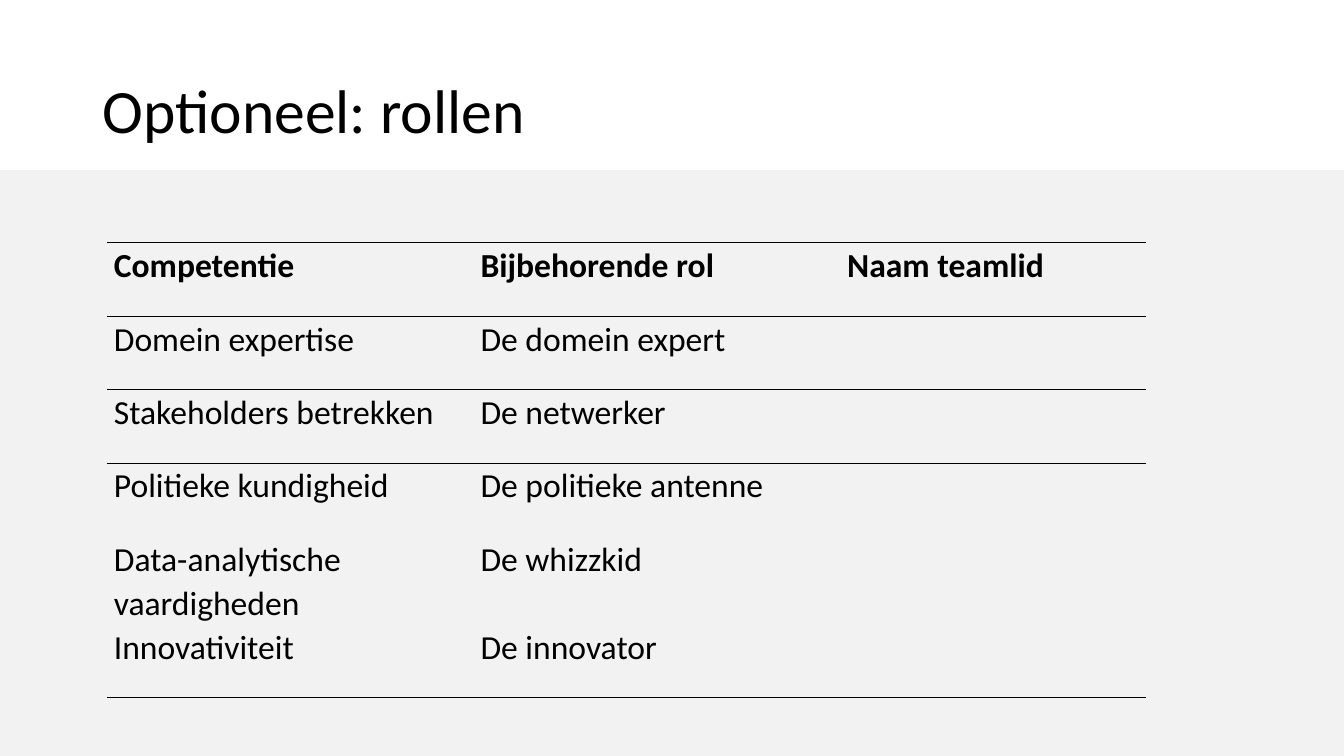
from typing import NamedTuple

from lxml import etree
from pptx import Presentation
from pptx.dml.color import RGBColor
from pptx.enum.shapes import MSO_SHAPE
from pptx.enum.text import MSO_ANCHOR, PP_ALIGN
from pptx.oxml.ns import qn
from pptx.util import Cm, Pt

RECTANGLE = MSO_SHAPE.RECTANGLE
MIDDLE = MSO_ANCHOR.MIDDLE
LEFT, JUSTIFY = PP_ALIGN.LEFT, PP_ALIGN.JUSTIFY

FONT = "Calibri"
BLACK, LIGHT_GREY = "000000", "F2F2F2"
PLAIN_TABLE_STYLE = "{2D5ABB26-0587-4C30-8999-92F81FD0307C}"

SLIDE_WIDTH, SLIDE_HEIGHT = Cm(33.87), Cm(19.05)
BAND_TOP = Cm(4.29)
COLUMN_WIDTHS = (Cm(9.24), Cm(9.24), Cm(7.72))
ROW_HEIGHT = Cm(1.85)


class Role(NamedTuple):
    competence: str
    role: str
    member: str = ""


ROLES = [
    Role("Competentie", "Bijbehorende rol", "Naam teamlid"),
    Role("Domein expertise", "De domein expert"),
    Role("Stakeholders betrekken", "De netwerker"),
    Role("Politieke kundigheid", "De politieke antenne"),
    Role("Data-analytische vaardigheden", "De whizzkid"),
    Role("Innovativiteit", "De innovator"),
]
RULED_BELOW = {0, 1, len(ROLES) - 1}


def rgb(value: str) -> RGBColor:
    return RGBColor.from_string(value)


def write(frame, text: str, *, size: float, bold: bool = False,
          align=LEFT, spacing: float = 1.0, color: str = BLACK) -> None:
    paragraph = frame.paragraphs[0]
    paragraph.alignment = align
    paragraph.line_spacing = spacing
    run = paragraph.add_run()
    run.text = text
    run.font.name = FONT
    run.font.size = Pt(size)
    run.font.bold = bold
    run.font.color.rgb = rgb(color)


def add_border(cell, side: str, color: str = BLACK, width: float = 1) -> None:
    """Rule one side of a cell: "T" for top, "B" for bottom."""
    properties = cell._tc.get_or_add_tcPr()
    line = etree.SubElement(properties, qn(f"a:ln{side}"), w=str(Pt(width)))
    fill = etree.SubElement(line, qn("a:solidFill"))
    etree.SubElement(fill, qn("a:srgbClr"), val=color)


def add_band(slide) -> None:
    band = slide.shapes.add_shape(RECTANGLE, 0, BAND_TOP, SLIDE_WIDTH, SLIDE_HEIGHT - BAND_TOP)
    band.shadow.inherit = False
    band.fill.solid()
    band.fill.fore_color.rgb = rgb(LIGHT_GREY)
    band.line.fill.background()
    slide.shapes._spTree.insert(2, band._element)  # behind the title


def add_title(slide, text: str) -> None:
    title = slide.shapes.title
    title.left, title.top, title.width, title.height = Cm(2.33), Cm(1.01), Cm(29.21), Cm(3.68)
    title.text_frame.vertical_anchor = MIDDLE
    title.text_frame.word_wrap = True
    write(title.text_frame, text, size=44, spacing=0.9)


def add_roles(slide, roles: list[Role]) -> None:
    table = slide.shapes.add_table(len(roles), len(COLUMN_WIDTHS), Cm(2.69), Cm(6.12),
                                   sum(COLUMN_WIDTHS), ROW_HEIGHT * len(roles)).table
    table._tbl.tblPr.find(qn("a:tableStyleId")).text = PLAIN_TABLE_STYLE
    table.horz_banding = False
    for column, width in zip(table.columns, COLUMN_WIDTHS):
        column.width = width
    for row, role in enumerate(roles):
        for column, text in enumerate(role):
            cell = table.cell(row, column)
            cell.margin_left = cell.margin_right = Cm(0.18)
            cell.margin_top = cell.margin_bottom = 0
            if row == 0 or row - 1 in RULED_BELOW:
                add_border(cell, "T")
            if row in RULED_BELOW:
                add_border(cell, "B")
            cell.fill.background()
            if text:
                write(cell.text_frame, text, size=24, bold=row == 0,
                      align=JUSTIFY, spacing=1.07)


def main() -> None:
    presentation = Presentation()
    presentation.slide_width, presentation.slide_height = SLIDE_WIDTH, SLIDE_HEIGHT
    slide = presentation.slides.add_slide(presentation.slide_layouts[5])
    add_band(slide)
    add_title(slide, "Optioneel: rollen")
    add_roles(slide, ROLES)
    presentation.save("out.pptx")


if __name__ == "__main__":
    main()
